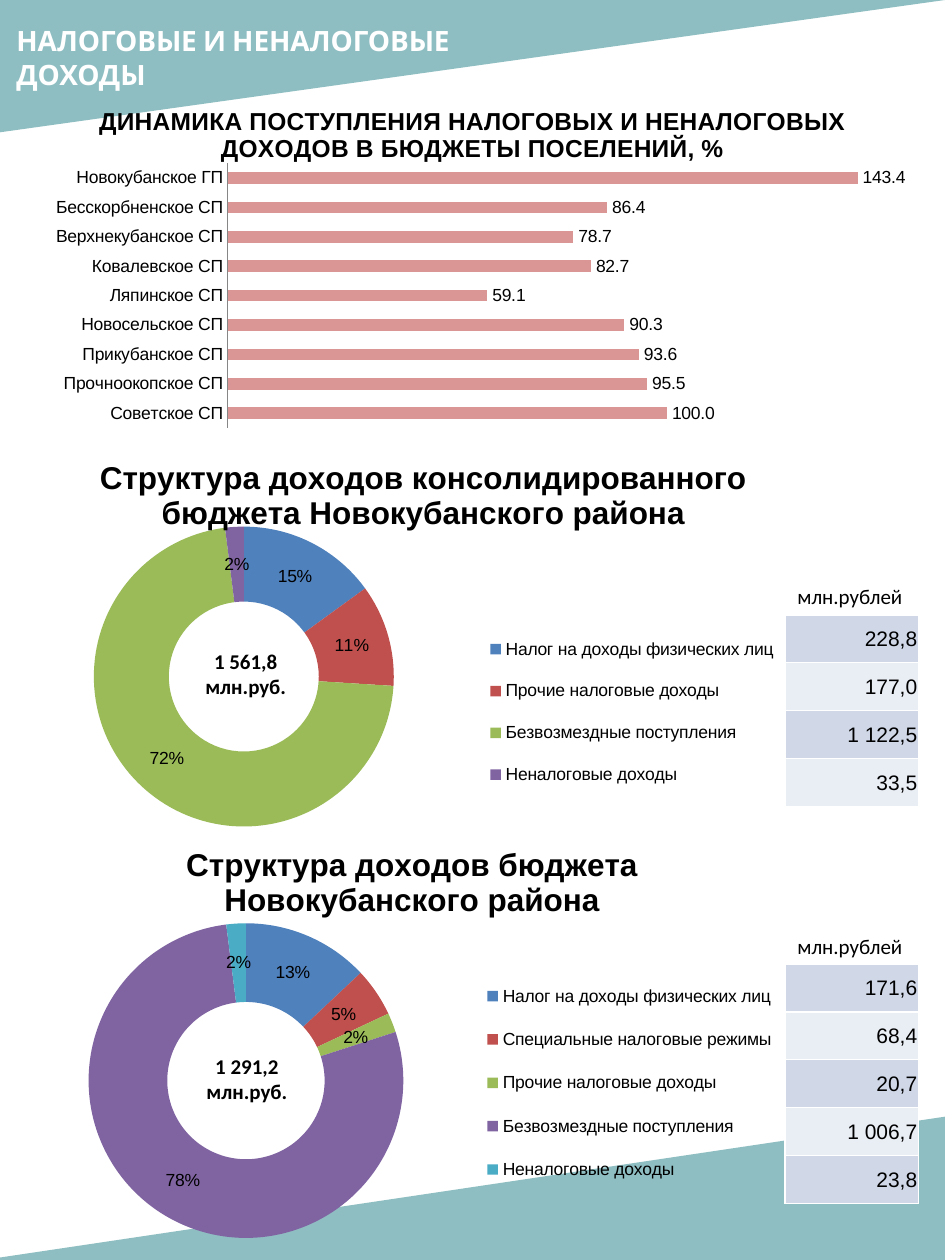
from lxml import etree
from pptx import Presentation
from pptx.chart.data import CategoryChartData
from pptx.dml.color import RGBColor
from pptx.enum.chart import XL_CHART_TYPE as ChartType, XL_LABEL_POSITION as LabelPosition
from pptx.enum.chart import XL_LEGEND_POSITION as LegendPosition, XL_TICK_MARK as TickMark
from pptx.enum.shapes import MSO_SHAPE as Shape
from pptx.enum.text import MSO_ANCHOR as Anchor, PP_ALIGN as Align
from pptx.oxml import parse_xml
from pptx.oxml.ns import nsdecls, qn
from pptx.util import Inches, Pt


def color(value):
    return RGBColor.from_string(value)


def layout_xml(x, y, width, height, inner=False):
    target = '<c:layoutTarget val="inner"/>' if inner else ""
    return parse_xml(
        f'<c:layout {nsdecls("c")}><c:manualLayout>{target}'
        '<c:xMode val="edge"/><c:yMode val="edge"/>'
        f'<c:x val="{x}"/><c:y val="{y}"/><c:w val="{width}"/><c:h val="{height}"/>'
        '</c:manualLayout></c:layout>')


BLACK, WHITE, TEAL = "000000", "FFFFFF", "519AA0"
SLICES = ["4F81BD", "C0504D", "9BBB59", "8064A2", "4BACC6"]
BANDS = ["D0D8E8", "E9EDF4"]

presentation = Presentation()
presentation.slide_width = Inches(7.5)
presentation.slide_height = Inches(10)
slide = presentation.slides.add_slide(presentation.slide_layouts[5])
shapes = slide.shapes

# Corner triangles
for left, top, width, height, flip in [(0, 0, 7.5, 1.05, "flipH"),
                                       (-0.13, 8.86, 7.65, 1.14, "flipV")]:
    triangle = shapes.add_shape(Shape.RIGHT_TRIANGLE, Inches(left), Inches(top),
                                Inches(width), Inches(height))
    triangle.shadow.inherit = False
    triangle.rotation = 180
    triangle._element.spPr.find(qn("a:xfrm")).set(flip, "1")
    triangle.fill.solid()
    triangle.fill.fore_color.rgb = color(TEAL)
    fill_color = triangle._element.spPr.find(qn("a:solidFill"))[0]
    etree.SubElement(fill_color, qn("a:alpha")).set("val", "64000")
    triangle.line.fill.background()

# Slide title, brought in front of the triangles
title = shapes.title
title.left, title.top, title.width, title.height = (
    Inches(0.03), Inches(0.14), Inches(4.51), Inches(0.64))
shapes._spTree.append(title._element)
title.text_frame.text = "НАЛОГОВЫЕ И НЕНАЛОГОВЫЕ ДОХОДЫ"
title.text_frame.vertical_anchor = Anchor.TOP
paragraph = title.text_frame.paragraphs[0]
paragraph.alignment = Align.LEFT
font = paragraph.runs[0].font
font.name, font.size, font.bold = "Cabin", Pt(16), True
font.color.rgb = color(WHITE)

# Amount tables
for top, amounts in [(4.88, ["228,8", "177,0", "1 122,5", "33,5"]),
                     (7.65, ["171,6", "68,4", "20,7", "1 006,7", "23,8"])]:
    table = shapes.add_table(len(amounts), 1, Inches(6.23), Inches(top), Inches(1.06),
                             Inches(0.38 * len(amounts))).table
    table.first_row = table.horz_banding = False
    for index, amount in enumerate(amounts):
        cell = table.cell(index, 0)
        cell.fill.solid()
        cell.fill.fore_color.rgb = color(BANDS[index % 2])
        cell.vertical_anchor = Anchor.MIDDLE
        cell.margin_left = cell.margin_right = cell.margin_top = Inches(0.01)
        cell.margin_bottom = 0
        cell.text_frame.text = amount
        paragraph = cell.text_frame.paragraphs[0]
        paragraph.alignment = Align.RIGHT
        font = paragraph.runs[0].font
        font.name, font.size = "Arial", Pt(12)
        font.color.rgb = color(BLACK)

# Charts: title, title size, place, plot area, legend area, categories and values
charts = [
    ("ДИНАМИКА ПОСТУПЛЕНИЯ НАЛОГОВЫХ И НЕНАЛОГОВЫХ ДОХОДОВ В БЮДЖЕТЫ ПОСЕЛЕНИЙ, %", 14,
     (0, 0.69, 7.5, 2.82), (0.241, 0.215, 0.744, 0.745), None,
     {"Новокубанское ГП": 143.4, "Бесскорбненское СП": 86.4, "Верхнекубанское СП": 78.7,
      "Ковалевское СП": 82.7, "Ляпинское СП": 59.1, "Новосельское СП": 90.3,
      "Прикубанское СП": 93.6, "Прочноокопское СП": 95.5, "Советское СП": 100}),
    ("Структура доходов консолидированного бюджета Новокубанского района", 18,
     (-0.09, 3.46, 6.9, 3.2), (0.121, 0.225, 0.345, 0.744), (0.57, 0.45, 0.34, 0.47),
     {"Налог на доходы физических лиц": 15, "Прочие налоговые доходы": 11,
      "Безвозмездные поступления": 72, "Неналоговые доходы": 2}),
    ("Структура доходов бюджета Новокубанского района", 18,
     (-0.18, 6.53, 6.9, 3.47), (0.128, 0.23, 0.362, 0.72), (0.58, 0.32, 0.34, 0.55),
     {"Налог на доходы физических лиц": 13, "Специальные налоговые режимы": 5,
      "Прочие налоговые доходы": 2, "Безвозмездные поступления": 78,
      "Неналоговые доходы": 2}),
]
for heading, size, place, plot_area, legend_area, values in charts:
    data = CategoryChartData()
    data.categories = list(values)
    data.add_series("Series 1", list(values.values()))
    kind = ChartType.DOUGHNUT if legend_area else ChartType.BAR_CLUSTERED
    chart = shapes.add_chart(kind, *[Inches(length) for length in place], data).chart
    chart.font.name, chart.font.size = "Arial", Pt(10)
    chart.font.color.rgb = color(BLACK)
    chart._chartSpace.chart.addnext(parse_xml(
        f'<c:spPr {nsdecls("c", "a")}><a:noFill/><a:ln><a:noFill/></a:ln></c:spPr>'))

    chart.has_title = True
    chart.chart_title.text_frame.text = heading
    font = chart.chart_title.text_frame.paragraphs[0].runs[0].font
    font.name, font.size, font.bold = "Arial", Pt(size), True
    font.color.rgb = color(BLACK)

    plot_element = chart._chartSpace.chart.plotArea
    for old_layout in plot_element.findall(qn("c:layout")):
        plot_element.remove(old_layout)
    plot_element.insert(0, layout_xml(*plot_area, inner=True))

    plot = chart.plots[0]
    plot.has_data_labels = True
    labels = plot.data_labels
    labels.number_format_is_linked = False
    series = plot.series[0]
    chart.has_legend = bool(legend_area)
    if legend_area:
        plot.vary_by_categories = True
        labels.number_format = "0%"
        labels.show_percentage, labels.show_value = True, False
        for index in range(len(values)):
            point_fill = series.points[index].format.fill
            point_fill.solid()
            point_fill.fore_color.rgb = color(SLICES[index])
        chart.legend.position = LegendPosition.RIGHT
        chart.legend.include_in_layout = False
        legend_element = chart.legend._element
        for old_layout in legend_element.findall(qn("c:layout")):
            legend_element.remove(old_layout)
        legend_element.find(qn("c:legendPos")).addnext(layout_xml(*legend_area))
    else:
        plot.vary_by_categories = False
        plot.gap_width, plot.overlap = 150, -25
        labels.number_format = "0.0"
        labels.show_value = True
        labels.position = LabelPosition.OUTSIDE_END
        series.format.fill.solid()
        series.format.fill.fore_color.rgb = color("D99694")
        chart.category_axis.reverse_order = True
        chart.category_axis.major_tick_mark = TickMark.NONE
        chart.category_axis.format.line.color.rgb = color("868686")
        chart.value_axis.visible = False
        chart.value_axis.has_major_gridlines = False
        chart.value_axis.minimum_scale, chart.value_axis.maximum_scale = 0, 160

# Units above the tables, each on a single line
# Totals inside the rings, each on two lines
for text, left, top, width, height, bold in [
        ("млн.рублей", 6.23, 4.58, 1.1, 0.3, False),
        ("млн.рублей", 6.23, 7.36, 1.1, 0.3, False),
        ("1 561,8\nмлн.руб.", 1.51, 5.1, 0.88, 0.5, True),
        ("1 291,2\nмлн.руб.", 1.51, 8.31, 0.9, 0.5, True)]:
    box = shapes.add_textbox(Inches(left), Inches(top), Inches(width), Inches(height))
    box.text_frame.word_wrap = bold
    if not bold:
        box.text_frame.margin_right = 0
    box.text_frame.text = text
    for paragraph in box.text_frame.paragraphs:
        paragraph.alignment = Align.CENTER if bold else Align.LEFT
        font = paragraph.runs[0].font
        font.name, font.size, font.bold = "Calibri", Pt(12), bold
        font.color.rgb = color(BLACK)

presentation.save("out.pptx")
